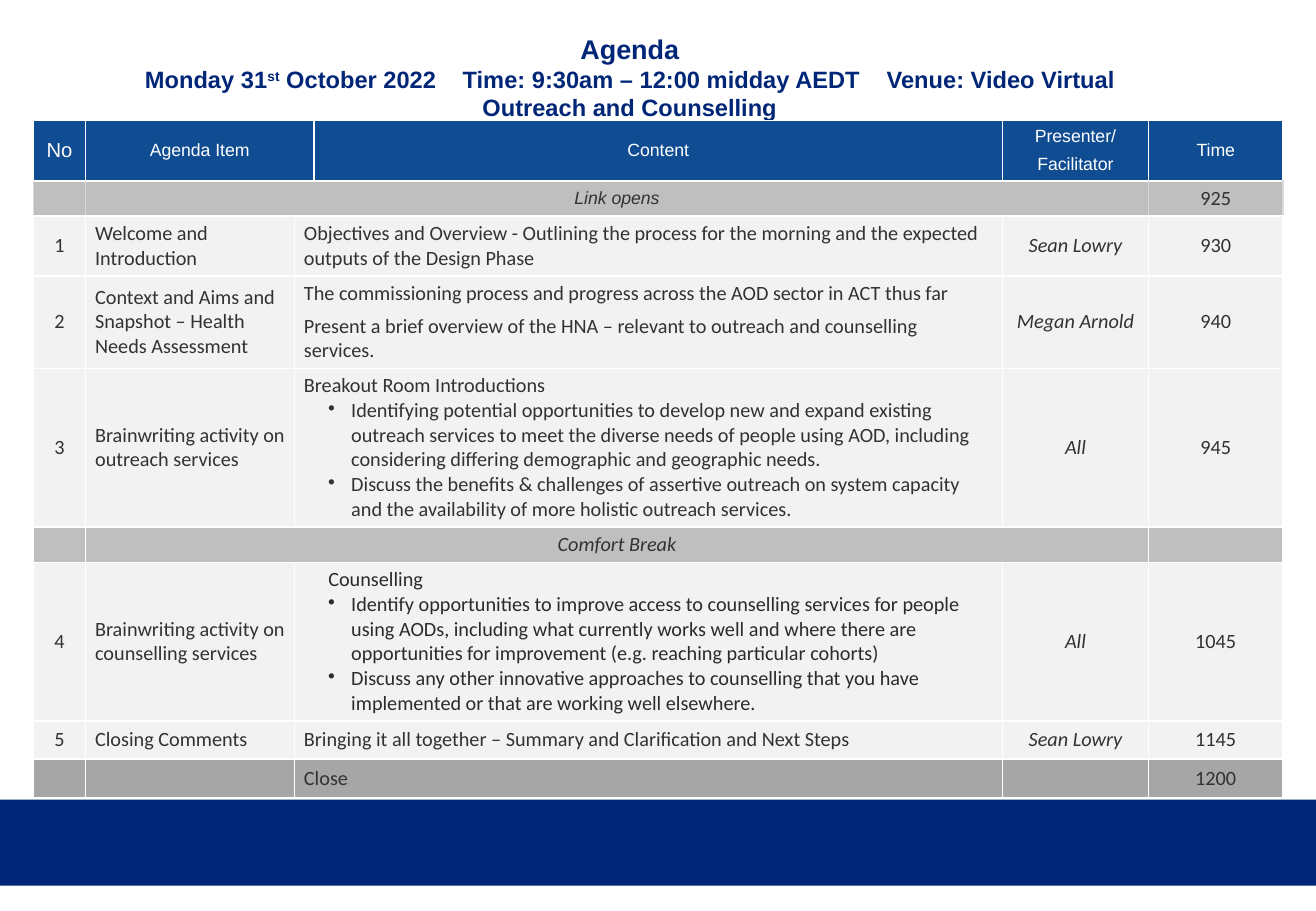
from dataclasses import dataclass

from lxml import etree
from pptx import Presentation
from pptx import util as u
from pptx.dml.color import RGBColor
from pptx.enum import shapes, text
from pptx.oxml import ns

Pt = u.Pt
COLORS = {"navy": "002677", "header": "104C92", "white": "FFFFFF", "ink": "323232",
          "dark": "2A2B2D", "break": "BFBFBF", "item": "F2F2F2", "close": "A6A6A6",
          "divider": "D9D9D9"}
COLUMN_WIDTHS = (31, 123.8, 11.5, 408.2, 86.4, 79.9)
LEFT, CENTER = text.PP_ALIGN.LEFT, text.PP_ALIGN.CENTER
MIDDLE, TOP = text.MSO_ANCHOR.MIDDLE, text.MSO_ANCHOR.TOP


@dataclass(frozen=True)
class Line:
    words: str
    indent: float = 0
    bullet: bool = False


@dataclass(frozen=True)
class Session:
    height: float
    number: str
    item: str
    content: tuple[Line, ...]
    presenter: str
    time: str
    fill: str = "item"
    gap: float = 5
    content_color: str = "ink"


@dataclass(frozen=True)
class Pause:
    """A row whose four middle columns are joined."""
    height: float
    label: str
    time: str
    font: str
    size: float
    anchor: text.MSO_ANCHOR
    divider: str


def bullet(words: str) -> Line:
    return Line(words, 28, True)


AGENDA = (
    Pause(20.7, "Link opens", "925", "Arial", 10.5, MIDDLE, "divider"),
    Session(35.6, "1", "Welcome and Introduction",
            (Line("Objectives and Overview - Outlining the process for the morning and the "
                  "expected outputs of the Design Phase"),), "Sean Lowry", "930"),
    Session(54.8, "2", "Context and Aims and Snapshot – Health Needs Assessment",
            (Line("The commissioning process and progress across the AOD sector in ACT thus far"),
             Line("Present a brief overview of the HNA – relevant to outreach and counselling "
                  "services.")), "Megan Arnold", "940"),
    Session(94.2, "3", "Brainwriting activity on outreach services",
            (Line("Breakout Room Introductions"),
             bullet("Identifying potential opportunities to develop new and expand existing "
                    "outreach services to meet the diverse needs of people using AOD, including "
                    "considering differing demographic and geographic needs."),
             bullet("Discuss the benefits & challenges of assertive outreach on system capacity "
                    "and the availability of more holistic outreach services.")),
            "All", "945", gap=0),
    Pause(21, "Comfort Break", "", "Calibri", 12, TOP, "white"),
    Session(93.9, "4", "Brainwriting activity on counselling services",
            (Line("Counselling", 14.4),
             bullet("Identify opportunities to improve access to counselling services for people "
                    "using AODs, including what currently works well and where there are "
                    "opportunities for improvement (e.g. reaching particular cohorts)"),
             bullet("Discuss any other innovative approaches to counselling that you have "
                    "implemented or that are working well elsewhere.")),
            "All", "1045", gap=0, content_color="dark"),
    Session(22.5, "5", "Closing Comments",
            (Line("Bringing it all together – Summary and Clarification and Next Steps"),),
            "Sean Lowry", "1145"),
    Session(23.1, "", "", (Line("Close"),), "", "1200", "close"),
)


def rgb(name: str) -> RGBColor:
    return RGBColor.from_string(COLORS[name])


def add_text(paragraph, words: str, *, size: float = 12, font: str = "Calibri",
             color: str = "ink", bold: bool = False, italic: bool = False,
             baseline: int = 0, spacing: float = 0) -> None:
    run = paragraph.add_run()
    run.text = words
    run.font.size, run.font.name = Pt(size), font
    run.font.bold, run.font.italic = bold, italic
    run.font.color.rgb = rgb(color)
    properties = run._r.get_or_add_rPr()
    if baseline:
        properties.set("baseline", str(baseline * 1000))
    if spacing:
        properties.set("spc", str(round(spacing * 100)))


def fill_cell(cell, lines: tuple[Line, ...], *, align=CENTER, anchor=MIDDLE,
              gap: float = 5, **style) -> None:
    cell.vertical_anchor = anchor
    frame = cell.text_frame
    for index, line in enumerate(lines):
        if not line.words:
            continue
        paragraph = frame.add_paragraph() if index else frame.paragraphs[0]
        paragraph.alignment = align
        if index:
            paragraph.space_before = Pt(gap)
        properties = paragraph._p.get_or_add_pPr()
        if line.indent:
            properties.set("marL", str(Pt(line.indent)))
            properties.set("indent", str(Pt(-13.7) if line.bullet else 0))
        if line.bullet:
            etree.SubElement(properties, ns.qn("a:buChar"), char="•")
        add_text(paragraph, line.words, **style)


def style_cell(cell, fill: str, divider: str = "white") -> None:
    """Set margins, borders and fill, and keep empty cells at body size."""
    cell.margin_left = cell.margin_right = Pt(5.6)
    cell.margin_top = cell.margin_bottom = Pt(2.8)
    properties = cell._tc.get_or_add_tcPr()
    for side in "LRTB":
        border = etree.SubElement(properties, ns.qn(f"a:ln{side}"), w=str(Pt(1)))
        solid = etree.SubElement(border, ns.qn("a:solidFill"))
        color = COLORS[divider if side in "LR" else "white"]
        etree.SubElement(solid, ns.qn("a:srgbClr"), val=color)
    cell.fill.solid()
    cell.fill.fore_color.rgb = rgb(fill)
    etree.SubElement(cell.text_frame.paragraphs[0]._p, ns.qn("a:endParaRPr"), sz="1200")


def add_heading(slide) -> None:
    box = slide.shapes.add_textbox(Pt(33.1), Pt(15.5), Pt(680.4), Pt(50.4))
    box.text_frame.word_wrap = True
    heading = box.text_frame.paragraphs[0]
    heading.alignment = CENTER
    style = dict(size=14, font="Arial", color="navy", bold=True)
    add_text(heading, "Agenda", **{**style, "size": 16})
    heading.add_line_break()
    add_text(heading, "Monday 31", **style)
    add_text(heading, "st", baseline=30, **style)
    add_text(heading, " October 2022", **style)
    for detail in ("Time: 9:30am – 12:00 midday AEDT", "Venue: Video Virtual"):
        add_text(heading, " ", spacing=11.7, **style)
        add_text(heading, detail, **style)
    heading.add_line_break()
    add_text(heading, "Outreach and Counselling", **style)


def add_agenda(slide) -> None:
    heights = (34.1, *(entry.height for entry in AGENDA))
    table = slide.shapes.add_table(len(heights), len(COLUMN_WIDTHS), Pt(19.8), Pt(71.5),
                                   Pt(sum(COLUMN_WIDTHS)), Pt(sum(heights))).table
    table.first_row = table.horz_banding = False
    for column, width in zip(table.columns, COLUMN_WIDTHS):
        column.width = Pt(width)
    for row, height in zip(table.rows, heights):
        row.height = Pt(height)

    for cell in table.rows[0].cells:
        style_cell(cell, "header")
    table.cell(0, 1).merge(table.cell(0, 2))
    titles = {0: ("No",), 1: ("Agenda Item",), 3: ("Content",),
              4: ("Presenter/", "Facilitator"), 5: ("Time",)}
    for column, words in titles.items():
        fill_cell(table.cell(0, column), tuple(map(Line, words)), font="Arial",
                  size=10.5 if column else 12, color="white")

    for index, entry in enumerate(AGENDA, 1):
        cells = list(table.rows[index].cells)
        if isinstance(entry, Pause):
            for cell in cells:
                style_cell(cell, "break", entry.divider)
            cells[1].merge(cells[4])
            fill_cell(cells[1], (Line(entry.label),), anchor=entry.anchor,
                      font=entry.font, size=entry.size, italic=True)
        else:
            for cell in cells:
                style_cell(cell, entry.fill)
            cells[2].merge(cells[3])
            fill_cell(cells[0], (Line(entry.number),))
            fill_cell(cells[1], (Line(entry.item),), align=LEFT)
            fill_cell(cells[2], entry.content, align=LEFT, gap=entry.gap,
                      color=entry.content_color)
            fill_cell(cells[4], (Line(entry.presenter),), italic=True)
        fill_cell(cells[5], (Line(entry.time),))


def main() -> None:
    deck = Presentation()
    deck.slide_width, deck.slide_height = Pt(780), Pt(540)
    slide = deck.slides.add_slide(deck.slide_layouts[6])
    footer = slide.shapes.add_shape(shapes.MSO_SHAPE.RECTANGLE, 0, Pt(474), Pt(780), Pt(51))
    footer.shadow.inherit = False
    footer.fill.solid()
    footer.fill.fore_color.rgb = rgb("navy")
    footer.line.fill.background()
    add_heading(slide)
    add_agenda(slide)
    deck.save("out.pptx")


if __name__ == "__main__":
    main()
